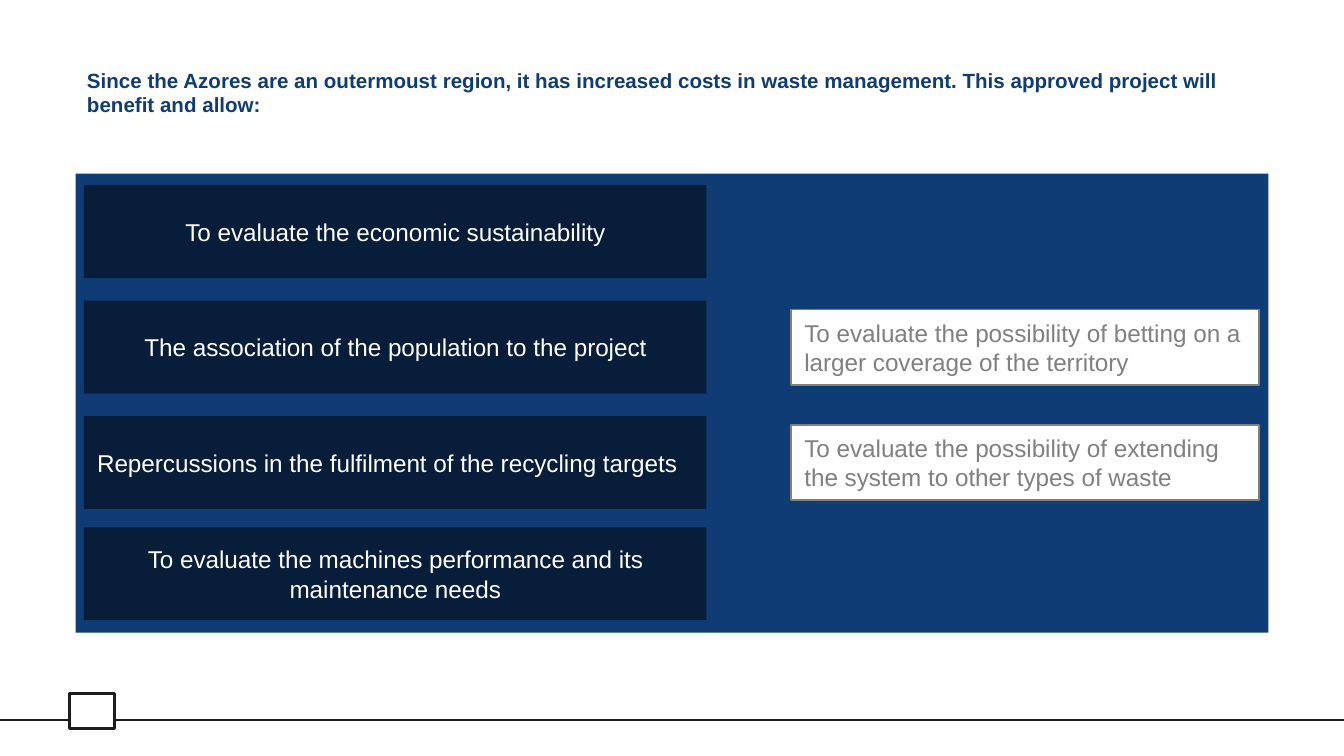
import dataclasses

import pptx
import pptx.dml.color
import pptx.enum.shapes
import pptx.enum.text
import pptx.oxml.ns
import pptx.util
from lxml import etree

Pt = pptx.util.Pt
ALIGN = pptx.enum.text.PP_ALIGN
ANCHOR = pptx.enum.text.MSO_ANCHOR
RECTANGLE = pptx.enum.shapes.MSO_SHAPE.RECTANGLE

NAVY, INK, GREY, WHITE, BLACK = "0F3C74", "1D1E1C", "808080", "FFFFFF", "000000"
PAGE_WIDTH, PAGE_HEIGHT = 720, 405
ROW_TOPS = [99.2, 161.1, 222.9, 282.5]
GOAL_LEFT, GOAL_WIDTH, GOAL_HEIGHT = 44.9, 333.6, 49.8
OPTION_LEFT, OPTION_WIDTH, OPTION_HEIGHT = 423.8, 250.5, 40.3
RULE_TOP = 385.7
EMBLEM_LEFT, EMBLEM_RIGHT = 37.4, 61.2


@dataclasses.dataclass
class Block:
    left: float
    top: float
    width: float
    height: float
    text: str = ""
    fill: str | None = None
    opacity: int = 100
    line: str | None = None
    line_width: float = 1
    color: str = WHITE
    align: ALIGN = ALIGN.LEFT


def rgb(value: str) -> pptx.dml.color.RGBColor:
    return pptx.dml.color.RGBColor.from_string(value)


def write_text(shape, text: str, color: str, anchor: ANCHOR, align: ALIGN, **font_format) -> None:
    frame = shape.text_frame
    frame.word_wrap = True
    frame.auto_size = pptx.enum.text.MSO_AUTO_SIZE.NONE
    frame.vertical_anchor = anchor
    para = frame.paragraphs[0]
    para.alignment = align
    span = para.add_run()
    span.text = text
    span.font.color.rgb = rgb(color)
    for name, value in {"name": "Arial", **font_format}.items():
        setattr(span.font, name, value)


def draw_block(page, block: Block) -> None:
    box = page.shapes.add_shape(
        RECTANGLE, Pt(block.left), Pt(block.top), Pt(block.width), Pt(block.height))
    box.shadow.inherit = False
    if block.fill:
        box.fill.solid()
        box.fill.fore_color.rgb = rgb(block.fill)
        if block.opacity < 100:
            color = box.fill._xPr.find(".//" + pptx.oxml.ns.qn("a:srgbClr"))
            alpha = etree.SubElement(color, pptx.oxml.ns.qn("a:alpha"))
            alpha.set("val", str(block.opacity * 1000))
    else:
        box.fill.background()
    if block.line:
        box.line.color.rgb = rgb(block.line)
        box.line.width = Pt(block.line_width)
    else:
        box.line.fill.background()
    if block.text:
        write_text(box, block.text, block.color, ANCHOR.MIDDLE, block.align, size=Pt(13))


def draw_rule(page, start: float, end: float) -> None:
    rule = page.shapes.add_connector(
        pptx.enum.shapes.MSO_CONNECTOR.STRAIGHT,
        Pt(start), Pt(RULE_TOP), Pt(end), Pt(RULE_TOP))
    rule.line.color.rgb = rgb(INK)
    rule.line.width = Pt(1.5)
    etree.SubElement(rule._element.spPr, pptx.oxml.ns.qn("a:effectLst"))


def goal(top: float, text: str, align: ALIGN = ALIGN.CENTER) -> Block:
    return Block(GOAL_LEFT, top, GOAL_WIDTH, GOAL_HEIGHT, text, BLACK, 50, align=align)


def option(row_top: float, text: str) -> Block:
    """White box centred vertically on its row."""
    top = row_top + (GOAL_HEIGHT - OPTION_HEIGHT) / 2
    return Block(OPTION_LEFT, top, OPTION_WIDTH, OPTION_HEIGHT, text, WHITE,
                 line=GREY, color=GREY)


def main() -> None:
    deck = pptx.Presentation()
    deck.slide_width, deck.slide_height = Pt(PAGE_WIDTH), Pt(PAGE_HEIGHT)
    page = deck.slides.add_slide(deck.slide_layouts.get_by_name("Title Only"))

    title = page.shapes.title
    for name, value in {"left": 39.4, "top": 32.6, "width": 634.3, "height": 34}.items():
        setattr(title, name, Pt(value))
    write_text(
        title,
        "Since the Azores are an outermoust region, it has increased costs in waste "
        "management. This approved project will benefit and allow:",
        NAVY, ANCHOR.TOP, ALIGN.LEFT, size=Pt(11), bold=True)

    draw_rule(page, 0, EMBLEM_LEFT)
    draw_rule(page, EMBLEM_RIGHT, PAGE_WIDTH)

    blocks = [
        Block(EMBLEM_LEFT, 371.5, EMBLEM_RIGHT - EMBLEM_LEFT, 19, line=INK, line_width=1.5),
        Block(40.5, 93, 639, 246, fill=NAVY),
        goal(ROW_TOPS[0], "To evaluate the economic sustainability"),
        goal(ROW_TOPS[1], "The association of the population to the project"),
        goal(ROW_TOPS[2], "Repercussions in the fulfilment of the recycling targets", ALIGN.LEFT),
        goal(ROW_TOPS[3], "To evaluate the machines performance and its maintenance needs"),
        option(ROW_TOPS[1], "To evaluate the possibility of betting on a larger coverage "
                            "of the territory"),
        option(ROW_TOPS[2], "To evaluate the possibility of extending the system to other "
                            "types of waste"),
    ]
    for block in blocks:
        draw_block(page, block)

    deck.save("out.pptx")


if __name__ == "__main__":
    main()
